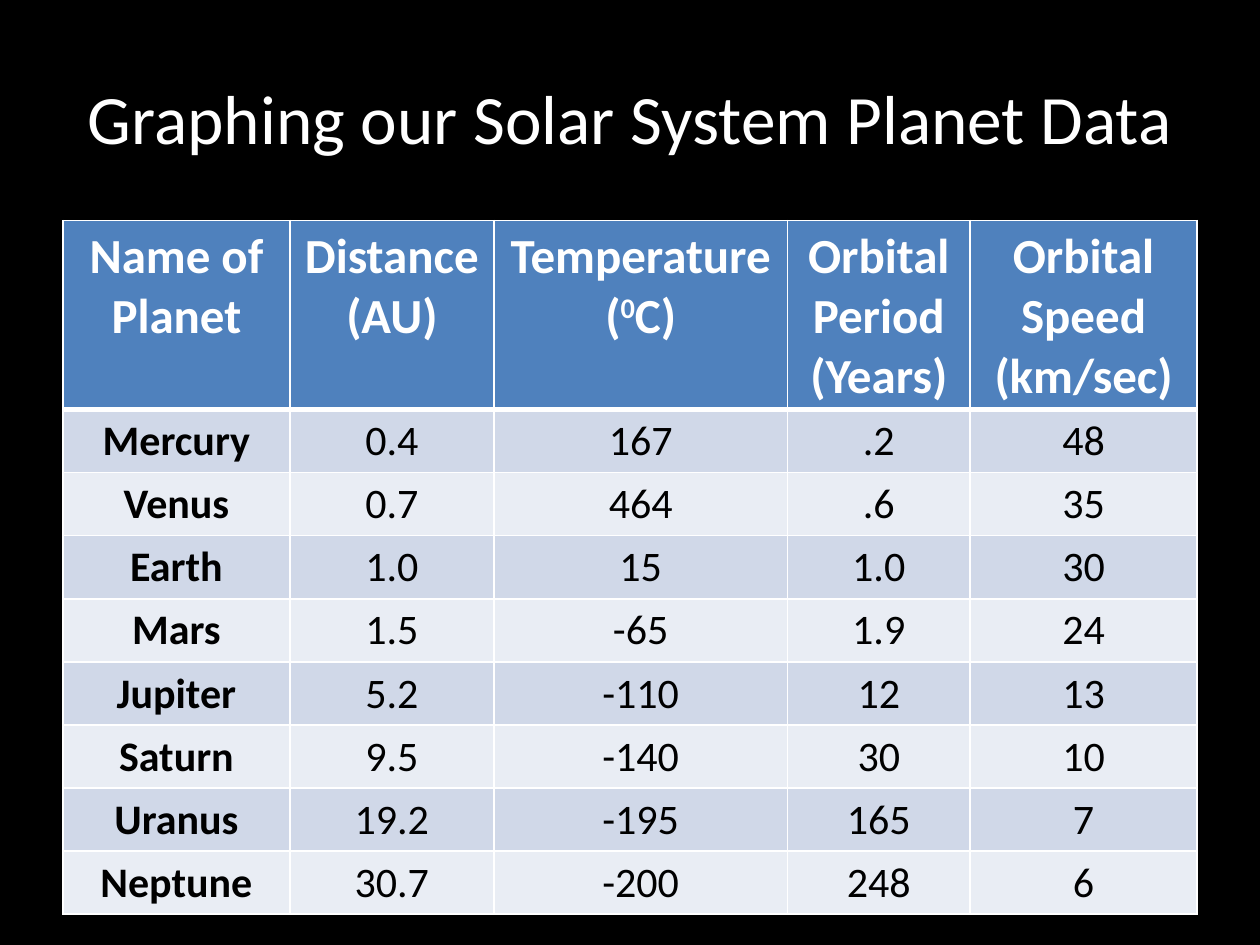
import pptx
import pptx.dml.color
import pptx.enum.text
import pptx.oxml
import pptx.oxml.ns
import pptx.util

HEADS = [
    ["Name of Planet"],
    ["Distance", "(AU)"],
    ["Temperature", "(^0^C)"],
    ["Orbital Period", "(Years)"],
    ["Orbital Speed", "(km/sec)"],
]
WIDTHS = [3.6, 3.24, 4.66, 2.9, 3.6]
PLANETS = [
    ("Mercury", "0.4", "167", ".2", "48"),
    ("Venus", "0.7", "464", ".6", "35"),
    ("Earth", "1.0", "15", "1.0", "30"),
    ("Mars", "1.5", "-65", "1.9", "24"),
    ("Jupiter", "5.2", "-110", "12", "13"),
    ("Saturn", "9.5", "-140", "30", "10"),
    ("Uranus", "19.2", "-195", "165", "7"),
    ("Neptune", "30.7", "-200", "248", "6"),
]


def tint(code):
    return pptx.dml.color.RGBColor.from_string(code)


class Deck:
    """Slide style on a grid of 20 columns and 30 rows."""

    face = "Calibri"
    dark, light, head = "000000", "FFFFFF", "4F81BD"
    bands = ("D0D8E8", "E9EDF4")

    def __init__(self):
        self.file = pptx.Presentation()
        self.file.slide_width = pptx.util.Inches(10)
        self.file.slide_height = pptx.util.Inches(7.5)
        self.slide = self.file.slides.add_slide(self.file.slide_layouts[6])
        back = self.slide.background.fill
        back.solid()
        back.fore_color.rgb = tint(self.dark)

    def col(self, count):
        return round(self.file.slide_width * count / 20)

    def row(self, count):
        return round(self.file.slide_height * count / 30)

    def area(self, left, top, width, height):
        return self.col(left), self.row(top), self.col(width), self.row(height)

    def text(self, frame, lines, size, color, bold=False):
        """Add centred lines; words between carets are raised."""
        frame.word_wrap = True
        for n, line in enumerate(lines):
            para = frame.add_paragraph() if n else frame.paragraphs[0]
            para.alignment = pptx.enum.text.PP_ALIGN.CENTER
            for k, words in enumerate(line.split("^")):
                run = para.add_run()
                run.text = words
                font = run.font
                font.name, font.size, font.bold = self.face, pptx.util.Pt(size), bold
                font.color.rgb = tint(color)
                if k % 2:
                    run._r.get_or_add_rPr().set("baseline", "30000")

    def title(self, words, *place):
        frame = self.slide.shapes.add_textbox(*self.area(*place)).text_frame
        frame.vertical_anchor = pptx.enum.text.MSO_ANCHOR.MIDDLE
        self.text(frame, [words], 39.6, self.light)

    def edge(self, cell, side, width):
        line = pptx.oxml.parse_xml(
            f'<a:ln{side} {pptx.oxml.ns.nsdecls("a")} w="{pptx.util.Pt(width)}">'
            f'<a:solidFill><a:srgbClr val="{self.light}"/></a:solidFill></a:ln{side}>'
        )
        cell._tc.get_or_add_tcPr().append(line)

    def cell(self, cell, lines, fill, size, color, bold, top=1, base=1):
        for side, width in zip("LRTB", (1, 1, top, base)):
            self.edge(cell, side, width)
        cell.fill.solid()
        cell.fill.fore_color.rgb = tint(fill)
        self.text(cell.text_frame, lines, size, color, bold)

    def table(self, heads, data, widths, *place):
        shape = self.slide.shapes.add_table(len(data) + 1, len(heads), *self.area(*place))
        grid = shape.table
        for part, width in zip(grid.columns, widths):
            part.width = self.col(width)
        for n, part in enumerate(grid.rows):
            part.height = self.row(2 if n else 6)
        for c, lines in enumerate(heads):
            self.cell(grid.cell(0, c), lines, self.head, 28, self.light, True, base=3)
        for r, record in enumerate(data):
            for c, words in enumerate(record):
                self.cell(grid.cell(r + 1, c), [words], self.bands[r % 2], 24,
                          self.dark, c == 0, top=1 if r else 3)


def main():
    deck = Deck()
    deck.title("Graphing our Solar System Planet Data", 1, 1.2, 18, 5)
    deck.table(HEADS, PLANETS, WIDTHS, 1, 7, 18, 22)
    deck.file.save("out.pptx")


if __name__ == "__main__":
    main()
